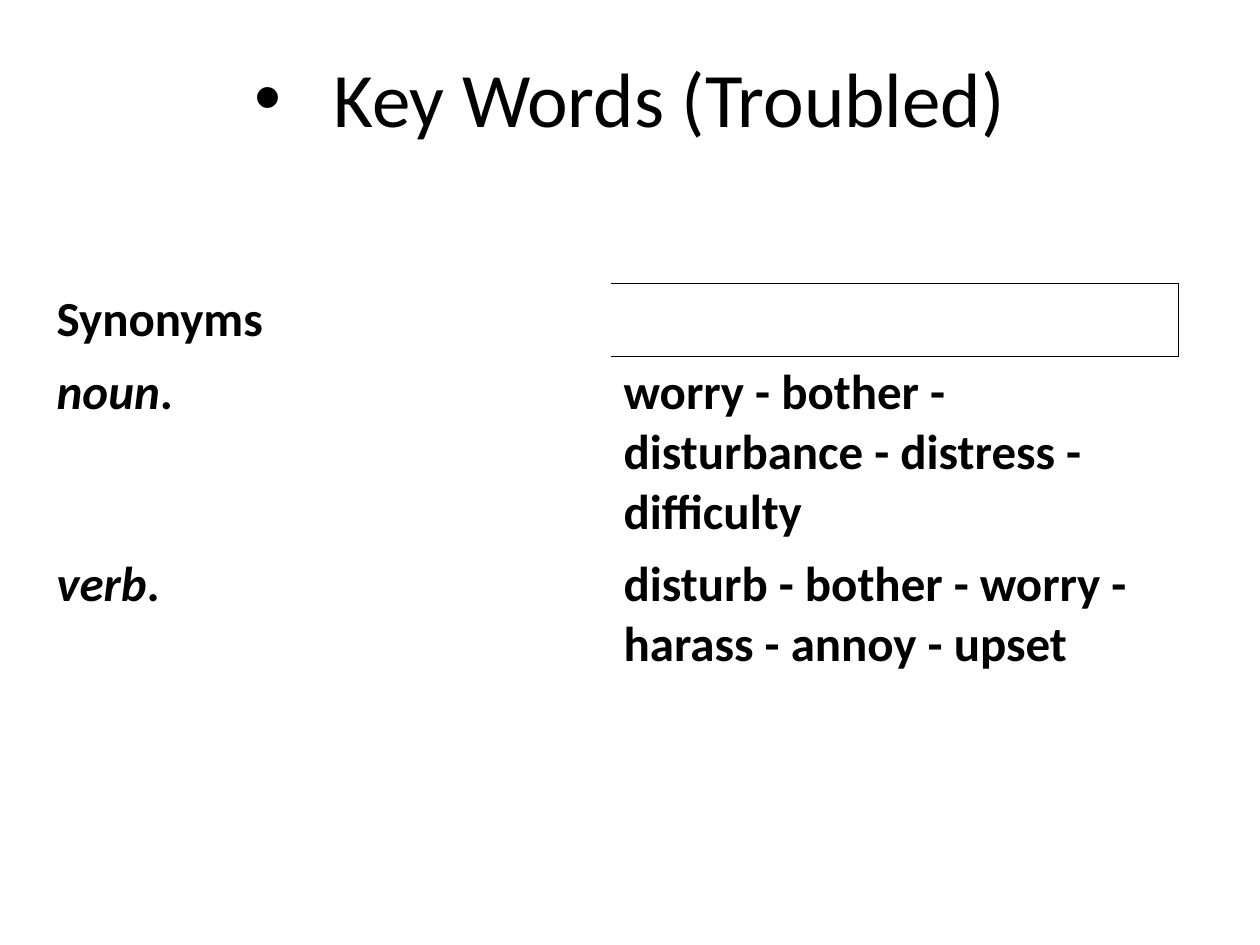
"""Build the Key Words slide with its table of synonyms."""
from lxml.etree import SubElement as Sub
from pptx import Presentation
from pptx.dml.color import RGBColor as RGB
from pptx.enum.text import MSO_ANCHOR as ANCHOR, PP_ALIGN as ALIGN
from pptx.oxml.ns import qn
from pptx.util import Pt

COLORS = {"text": "000000", "border": "000000"}
FONT = "Calibri"
ROWS = [
    ([("Synonyms", False)], "", 41.7),
    ([("noun", True), (".", False)],
     "worry - bother - disturbance - distress - difficulty", 109.7),
    ([("verb", True), (".", False)],
     "disturb - bother - worry - harass - annoy - upset", 75.5),
]


def set_font(p, size, bold=False):
    p.font.name = FONT
    p.font.size = Pt(size)
    p.font.bold = bold
    p.font.color.rgb = RGB.from_string(COLORS["text"])


def add_title(s, text):
    sp = s.shapes.title
    sp.left, sp.top, sp.width, sp.height = Pt(36), Pt(21.6), Pt(648), Pt(67)
    tf = sp.text_frame
    tf.text = text
    tf.vertical_anchor = ANCHOR.MIDDLE
    p = tf.paragraphs[0]
    p.alignment = ALIGN.CENTER
    set_font(p, 44)
    pPr = p._p.get_or_add_pPr()
    pPr.set("marL", str(Pt(45)))
    pPr.set("indent", str(-Pt(45)))
    for old in pPr.findall(qn("a:buNone")):
        pPr.remove(old)
    bullet_font = Sub(pPr, qn("a:buFont"), typeface="Arial")
    bullet = Sub(pPr, qn("a:buChar"), char="•")
    pPr.insert(0, bullet_font)
    pPr.insert(1, bullet)


def fill_cell(cell, runs, anchor):
    cell.margin_left = Pt(7.2)
    cell.margin_right = cell.margin_top = cell.margin_bottom = Pt(3.6)
    cell.vertical_anchor = anchor
    cell.fill.background()
    p = cell.text_frame.paragraphs[0]
    set_font(p, 28, True)
    for text, italic in runs:
        r = p.add_run()
        r.text = text
        r.font.italic = italic


def add_borders(cell, widths):
    tcPr = cell._tc.get_or_add_tcPr()
    for i, (side, width) in enumerate(widths.items()):
        ln = Sub(tcPr, qn(f"a:{side}"), w=str(Pt(width)))
        Sub(Sub(ln, qn("a:solidFill")), qn("a:srgbClr"), val=COLORS["border"])
        tcPr.insert(i, ln)


def add_synonyms(s):
    height = sum(row[2] for row in ROWS)
    table = s.shapes.add_table(len(ROWS), 2, Pt(25.2), Pt(162), Pt(648), Pt(height)).table
    table.first_row = table.horz_banding = False
    style = table._tbl.tblPr.find(qn("a:tableStyleId"))
    style.text = "{2D5ABB26-0587-4C30-8999-92F81FD0307C}"
    for i, (label, words, row_height) in enumerate(ROWS):
        table.rows[i].height = Pt(row_height)
        fill_cell(table.cell(i, 0), label, ANCHOR.TOP)
        fill_cell(table.cell(i, 1), [(words, False)] if words else [], ANCHOR.MIDDLE)
    add_borders(table.cell(0, 1), {"lnR": 0.75, "lnT": 1, "lnB": 0.75})


def main():
    prs = Presentation()
    prs.slide_width, prs.slide_height = Pt(720), Pt(540)
    s = prs.slides.add_slide(prs.slide_layouts[5])
    add_title(s, "Key Words (Troubled)")
    add_synonyms(s)
    prs.save("out.pptx")


if __name__ == "__main__":
    main()
